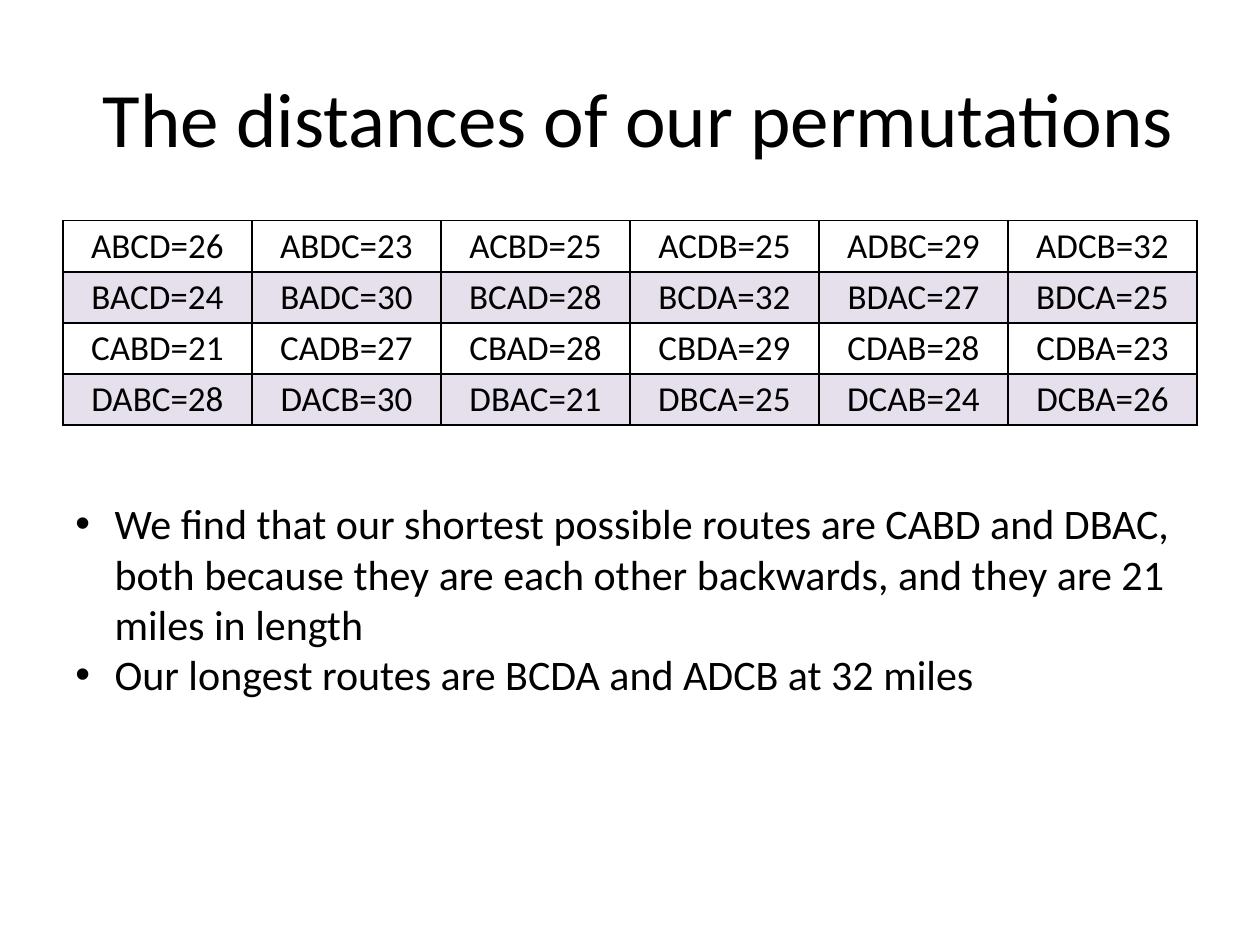
from lxml.etree import SubElement
from pptx import Presentation
from pptx.dml.color import RGBColor
from pptx.enum.text import MSO_ANCHOR, PP_ALIGN
from pptx.oxml.ns import qn
from pptx.util import Cm, Pt

BLACK = RGBColor(0x00, 0x00, 0x00)
PURPLE = RGBColor(0x80, 0x64, 0xA2)
FONT = "Calibri"
TITLE = " The distances of our permutations"
ROUTES = [
    ["ABCD=26", "ABDC=23", "ACBD=25", "ACDB=25", "ADBC=29", "ADCB=32"],
    ["BACD=24", "BADC=30", "BCAD=28", "BCDA=32", "BDAC=27", "BDCA=25"],
    ["CABD=21", "CADB=27", "CBAD=28", "CBDA=29", "CDAB=28", "CDBA=23"],
    ["DABC=28", "DACB=30", "DBAC=21", "DBCA=25", "DCAB=24", "DCBA=26"],
]
FINDINGS = [
    "We find that our shortest possible routes are CABD and DBAC, both because "
    "they are each other backwards, and they are 21 miles in length",
    "Our longest routes are BCDA and ADCB at 32 miles",
]


def format_text(text_frame, size, alignment):
    """Give every paragraph the slide's font, a size and an alignment."""
    for paragraph in text_frame.paragraphs:
        paragraph.alignment = alignment
        for run in paragraph.runs:
            run.font.name = FONT
            run.font.size = Pt(size)
            run.font.color.rgb = BLACK


def add_text(slide, box, text, size, alignment, anchor):
    """Add a wrapping text box and return its text frame."""
    text_frame = slide.shapes.add_textbox(*box).text_frame
    text_frame.word_wrap = True
    text_frame.vertical_anchor = anchor
    text_frame.text = text
    format_text(text_frame, size, alignment)
    return text_frame


def add_title(slide, box):
    """Add the centred slide title."""
    add_text(slide, box, TITLE, 44, PP_ALIGN.CENTER, MSO_ANCHOR.MIDDLE)


def add_borders(cell):
    """Draw a thin black line on all four sides of a cell."""
    properties = cell._tc.get_or_add_tcPr()
    for side in ("a:lnL", "a:lnR", "a:lnT", "a:lnB"):
        line = SubElement(properties, qn(side), w=str(Pt(1)))
        fill = SubElement(line, qn("a:solidFill"))
        SubElement(fill, qn("a:srgbClr"), val=str(BLACK))


def shade(cell):
    """Fill a cell with purple at 20 % opacity."""
    cell.fill.solid()
    cell.fill.fore_color.rgb = PURPLE
    color = cell._tc.tcPr.find(qn("a:solidFill")).find(qn("a:srgbClr"))
    SubElement(color, qn("a:alpha"), val="20000")


def add_route_table(slide, box):
    """Add the grid of routes, with every second row shaded."""
    table = slide.shapes.add_table(len(ROUTES), len(ROUTES[0]), *box).table
    table.first_row = table.horz_banding = False
    for row, routes in enumerate(ROUTES):
        for column, route in enumerate(routes):
            cell = table.cell(row, column)
            cell.text = route
            cell.vertical_anchor = MSO_ANCHOR.MIDDLE
            cell.margin_left = cell.margin_right = 0
            cell.margin_top = cell.margin_bottom = 0
            format_text(cell.text_frame, 20, PP_ALIGN.CENTER)
            add_borders(cell)
            if row % 2:
                shade(cell)
            else:
                cell.fill.background()


def add_findings(slide, box):
    """Add the bulleted findings."""
    text_frame = add_text(slide, box, "\n".join(FINDINGS), 24, PP_ALIGN.LEFT, MSO_ANCHOR.TOP)
    indent = Cm(0.79)
    for paragraph in text_frame.paragraphs:
        properties = paragraph._p.get_or_add_pPr()
        properties.set("marL", str(indent))
        properties.set("indent", str(-indent))
        SubElement(properties, qn("a:buFont"), typeface="Arial")
        SubElement(properties, qn("a:buChar"), char="•")


def main():
    """Build and save the slide."""
    presentation = Presentation()
    presentation.slide_width = Cm(25.4)
    presentation.slide_height = Cm(19.05)
    slide = presentation.slides.add_slide(presentation.slide_layouts[6])
    left, width = Cm(1.27), Cm(22.86)
    add_title(slide, (left, Cm(0.76), width, Cm(3.18)))
    add_route_table(slide, (left, Cm(4.45), width, Cm(4.12)))
    add_findings(slide, (left, Cm(9.91), width, Cm(4.37)))
    presentation.save("out.pptx")


if __name__ == "__main__":
    main()
